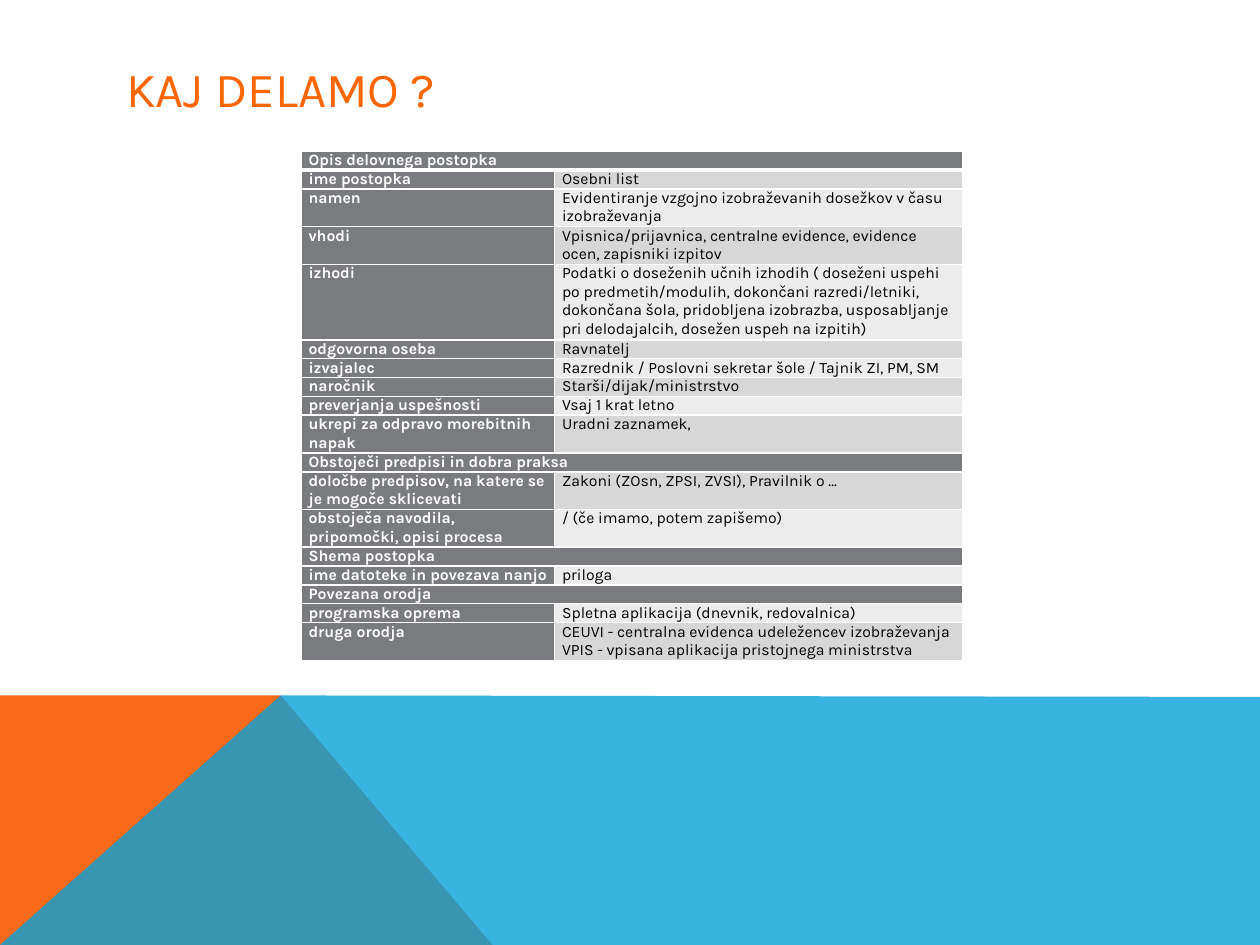
from dataclasses import dataclass
from typing import Optional

from lxml.etree import SubElement
from pptx import Presentation
from pptx.dml.color import RGBColor as RGB
from pptx.enum.text import MSO_ANCHOR as Anchor, PP_ALIGN as Align
from pptx.oxml.ns import qn
from pptx.util import Cm, Pt


@dataclass(frozen=True)
class Theme:
    font: str = "Karla"
    title_size: int = 28
    cell_size: int = 9
    title: str = "FF6600"
    orange: str = "F96A1B"
    blue: str = "08A1D9"
    label: str = "797B7E"
    bands: tuple = ("ECECEC", "D7D7D8")
    light: str = "FFFFFF"
    dark: str = "000000"


@dataclass(frozen=True)
class Row:
    label: str
    value: Optional[str] = None  # None makes a section heading
    lines: int = 1


@dataclass(frozen=True)
class Panel:
    points: tuple  # corners in cm
    color: str
    opacity: int = 100


THEME = Theme()
LINE_HEIGHT = 0.38
COLUMNS = (5.11, 8.23)

PANELS = (
    Panel(((0, 19.05), (0, 14.02), (5.66, 14.02), (9.93, 19.05)), THEME.orange),
    Panel(((0, 19.05), (5.66, 14.02), (25.4, 14.05), (25.4, 19.05)), THEME.blue, 80),
)

ROWS = (
    Row("Opis delovnega postopka"),
    Row("ime postopka", "Osebni list"),
    Row("namen", "Evidentiranje vzgojno izobraževanih dosežkov v času izobraževanja", 2),
    Row("vhodi", "Vpisnica/prijavnica, centralne evidence, evidence ocen, zapisniki izpitov", 2),
    Row("izhodi", "Podatki o doseženih učnih izhodih ( doseženi uspehi po predmetih/modulih, "
        "dokončani razredi/letniki, dokončana šola, pridobljena izobrazba, usposabljanje "
        "pri delodajalcih, dosežen uspeh na izpitih)", 4),
    Row("odgovorna oseba", "Ravnatelj"),
    Row("izvajalec", "Razrednik / Poslovni sekretar šole / Tajnik ZI, PM, SM"),
    Row("naročnik", "Starši/dijak/ministrstvo"),
    Row("preverjanja uspešnosti", "Vsaj 1 krat letno"),
    Row("ukrepi za odpravo morebitnih napak", "Uradni zaznamek,", 2),
    Row("Obstoječi predpisi in dobra praksa"),
    Row("določbe predpisov, na katere se je mogoče sklicevati",
        "Zakoni (ZOsn, ZPSI, ZVSI), Pravilnik o …", 2),
    Row("obstoječa navodila, pripomočki, opisi procesa", "/ (če imamo, potem zapišemo)", 2),
    Row("Shema postopka"),
    Row("ime datoteke in povezava nanjo", "priloga"),
    Row("Povezana orodja"),
    Row("programska oprema", "Spletna aplikacija (dnevnik, redovalnica)"),
    Row("druga orodja", "CEUVI - centralna evidenca udeležencev izobraževanja\n"
        "VPIS - vpisana aplikacija pristojnega ministrstva", 2),
)


def write(tf, text: str, *, size: int, color: str, bold: bool = False) -> None:
    """Fill a text frame, one left-aligned paragraph per line of text."""
    for i, line in enumerate(text.split("\n")):
        p = tf.add_paragraph() if i else tf.paragraphs[0]
        p.alignment = Align.LEFT
        r = p.add_run()
        r.text = line
        r.font.name, r.font.size, r.font.bold = THEME.font, Pt(size), bold
        r.font.color.rgb = RGB.from_string(color)


def draw_panel(s, panel: Panel) -> None:
    start, *rest = [(Cm(x), Cm(y)) for x, y in panel.points]
    builder = s.shapes.build_freeform(*start)
    builder.add_line_segments(rest, close=True)
    sp = builder.convert_to_shape()
    sp.shadow.inherit = False
    sp.line.fill.background()
    sp.fill.solid()
    sp.fill.fore_color.rgb = RGB.from_string(panel.color)
    if panel.opacity < 100:
        color = sp.fill._xPr.find(".//" + qn("a:srgbClr"))
        SubElement(color, qn("a:alpha"), val=str(panel.opacity * 1000))


def style_cell(cell, fill: str, top: int = 1, bottom: int = 1) -> None:
    """Set insets, white borders (widths in points) and fill."""
    cell.margin_left = cell.margin_right = Cm(0.15)
    cell.margin_top = cell.margin_bottom = 0
    tc_pr = cell._tc.get_or_add_tcPr()
    for side, width in zip("LRTB", (1, 1, top, bottom)):
        ln = SubElement(tc_pr, qn(f"a:ln{side}"), w=str(Pt(width)))
        SubElement(SubElement(ln, qn("a:solidFill")), qn("a:srgbClr"), val=THEME.light)
    cell.fill.solid()
    cell.fill.fore_color.rgb = RGB.from_string(fill)


def draw_table(s, rows: tuple) -> None:
    height = LINE_HEIGHT * sum(row.lines for row in rows)
    table = s.shapes.add_table(len(rows), len(COLUMNS), Cm(6.07), Cm(3.05),
                               Cm(sum(COLUMNS)), Cm(height)).table
    for column, width in zip(table.columns, COLUMNS):
        column.width = Cm(width)
    for i, row in enumerate(rows):
        table.rows[i].height = Cm(LINE_HEIGHT * row.lines)
        label, value = table.cell(i, 0), table.cell(i, 1)
        heading = row.value is None
        # A thicker rule sets off the first row
        edges = {"top": 3 if i == 1 else 1, "bottom": 3 if i == 0 else 1}
        style_cell(label, THEME.label, **edges)
        style_cell(value, THEME.label if heading else THEME.bands[i % 2], **edges)
        write(label.text_frame, row.label, size=THEME.cell_size, color=THEME.light, bold=True)
        if heading:
            label.merge(value)
        else:
            write(value.text_frame, row.value, size=THEME.cell_size, color=THEME.dark)


def main() -> None:
    prs = Presentation()
    prs.slide_width, prs.slide_height = Cm(25.4), Cm(19.05)
    s = prs.slides.add_slide(prs.slide_layouts[5])

    # Coloured panels at the foot
    for panel in PANELS:
        draw_panel(s, panel)

    # Title
    title = s.shapes.title
    title.left, title.top, title.width, title.height = Cm(2.29), Cm(1.02), Cm(20.88), Cm(1.52)
    title.text_frame.vertical_anchor = Anchor.MIDDLE
    write(title.text_frame, "KAJ DELAMO ?", size=THEME.title_size, color=THEME.title)

    # Process description
    draw_table(s, ROWS)
    prs.save("out.pptx")


if __name__ == "__main__":
    main()
